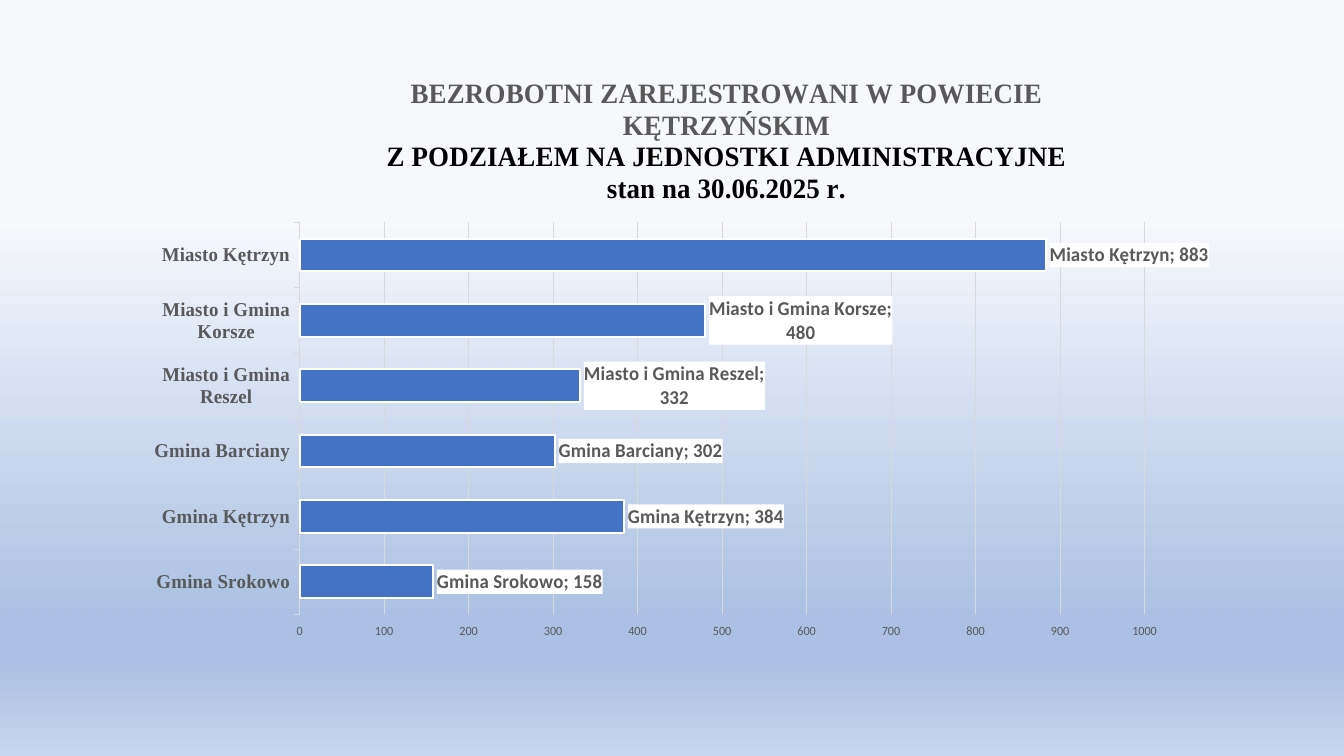
from copy import deepcopy
from lxml.etree import SubElement
from pptx import Presentation
from pptx.chart.data import CategoryChartData
from pptx.dml.color import RGBColor
from pptx.enum.chart import XL_CHART_TYPE, XL_LABEL_POSITION, XL_TICK_MARK
from pptx.enum.text import PP_ALIGN
from pptx.oxml import parse_xml
from pptx.oxml.ns import nsdecls, qn
from pptx.util import Inches, Pt

GREY = RGBColor(0x59, 0x59, 0x59)
BLACK = RGBColor(0, 0, 0)
WHITE = RGBColor(0xFF, 0xFF, 0xFF)
BLUE = RGBColor(0x44, 0x72, 0xC4)
LIGHT_GREY = RGBColor(0xD9, 0xD9, 0xD9)
SERIF, SANS = "Times New Roman", "Calibri"

TITLE = [
    ("BEZROBOTNI ZAREJESTROWANI W POWIECIE KĘTRZYŃSKIM", GREY),
    ("Z PODZIAŁEM NA JEDNOSTKI ADMINISTRACYJNE", BLACK),
    ("stan na 30.06.2025 r.", BLACK),
]
UNEMPLOYED = {
    "Gmina Srokowo": 158,
    "Gmina Kętrzyn": 384,
    "Gmina Barciany": 302,
    "Miasto i Gmina Reszel": 332,
    "Miasto i Gmina Korsze": 480,
    "Miasto Kętrzyn": 883,
}
BACKGROUND = [
    (0.29, RGBColor(0xF6, 0xF8, 0xFC)),
    (0.82, RGBColor(0xAB, 0xC0, 0xE4)),
    (0.87, RGBColor(0xAB, 0xC0, 0xE4)),
    (1.0, RGBColor(0xC7, 0xD5, 0xED)),
]
CHART_FRAME = (1.53, 0.73, 10.46, 6.05)
PLOT_SHARES = {"x": 0.137, "y": 0.244, "w": 0.834, "h": 0.643}
TITLE_SHARES = {"x": 0.22, "y": 0}


def style_font(font, name, size, color, bold=False):
    for key, value in {"name": name, "size": Pt(size), "bold": bold}.items():
        setattr(font, key, value)
    font.color.rgb = color


def style_line(line, color, width):
    line.color.rgb = color
    line.width = Pt(width)


def make_layout(shares, inner=False):
    layout = parse_xml(f"<c:layout {nsdecls('c')}><c:manualLayout/></c:layout>")
    if inner:
        SubElement(layout[0], qn("c:layoutTarget")).set("val", "inner")
    for key in ("xMode", "yMode"):
        SubElement(layout[0], qn(f"c:{key}")).set("val", "edge")
    for key, share in shares.items():
        SubElement(layout[0], qn(f"c:{key}")).set("val", str(share))
    return layout


def paint_background(page):
    fill = page.background.fill
    fill.gradient()
    fill.gradient_angle = 270
    stops = page.element.find(".//" + qn("a:gsLst"))
    while len(stops) < len(BACKGROUND):
        stops.append(deepcopy(stops[0]))
    for stop, (position, color) in zip(fill.gradient_stops, BACKGROUND):
        stop.position = position
        stop.color.rgb = color


def add_title(chart):
    frame = chart.chart_title.text_frame
    for index, (text, color) in enumerate(TITLE):
        para = frame.add_paragraph() if index else frame.paragraphs[0]
        para.alignment = PP_ALIGN.CENTER
        span = para.add_run()
        span.text = text
        style_font(span.font, SERIF, 20, color, True)
    title = frame._txBody.getparent().getparent()
    for old in title.findall(qn("c:layout")):
        title.remove(old)
    title.find(qn("c:tx")).addnext(make_layout(TITLE_SHARES))


def style_axes(chart):
    districts, scale = chart.category_axis, chart.value_axis
    for axis in (districts, scale):
        axis.major_tick_mark = XL_TICK_MARK.OUTSIDE
        axis.minor_tick_mark = XL_TICK_MARK.NONE
    style_font(districts.tick_labels.font, SERIF, 14, GREY, True)
    style_line(districts.format.line, LIGHT_GREY, 0.75)
    style_font(scale.tick_labels.font, SANS, 9, GREY)
    scale.format.line.fill.background()
    style_line(scale.major_gridlines.format.line, LIGHT_GREY, 0.75)
    limits = {"minimum_scale": 0, "maximum_scale": 1000, "major_unit": 100}
    for key, value in limits.items():
        setattr(scale, key, value)


def style_bars(plot):
    plot.gap_width = 100
    plot.vary_by_categories = False
    bars = plot.series[0]
    bars.format.fill.solid()
    bars.format.fill.fore_color.rgb = BLUE
    style_line(bars.format.line, WHITE, 1.5)
    labels = bars.data_labels
    style_font(labels.font, SANS, 14, GREY, True)
    settings = {
        "show_value": True,
        "show_category_name": True,
        "position": XL_LABEL_POSITION.OUTSIDE_END,
    }
    for key, value in settings.items():
        setattr(labels, key, value)
    element = labels._element
    element.find(qn("c:txPr")).addprevious(parse_xml(
        f"<c:spPr {nsdecls('c', 'a')}><a:solidFill>"
        f'<a:srgbClr val="{WHITE}"/></a:solidFill></c:spPr>'
    ))
    separator = parse_xml(f"<c:separator {nsdecls('c')}>; </c:separator>")
    flags = [child for child in element if child.tag.startswith(qn("c:show"))]
    flags[-1].addnext(separator)


def add_unemployment_chart(page):
    data = CategoryChartData()
    data.categories = list(UNEMPLOYED)
    data.add_series("Series 1", list(UNEMPLOYED.values()))
    frame = [Inches(length) for length in CHART_FRAME]
    chart = page.shapes.add_chart(XL_CHART_TYPE.BAR_CLUSTERED, *frame, data).chart
    chart.has_legend = False
    style_font(chart.font, SANS, 10, BLACK)
    add_title(chart)
    style_axes(chart)
    style_bars(chart.plots[0])
    area = chart.element.find(".//" + qn("c:plotArea"))
    for old in area.findall(qn("c:layout")):
        area.remove(old)
    area.insert(0, make_layout(PLOT_SHARES, inner=True))


def main():
    deck = Presentation()
    deck.slide_width, deck.slide_height = Inches(13.33), Inches(7.5)
    page = deck.slides.add_slide(deck.slide_layouts[6])
    paint_background(page)
    add_unemployment_chart(page)
    deck.save("out.pptx")


if __name__ == "__main__":
    main()
